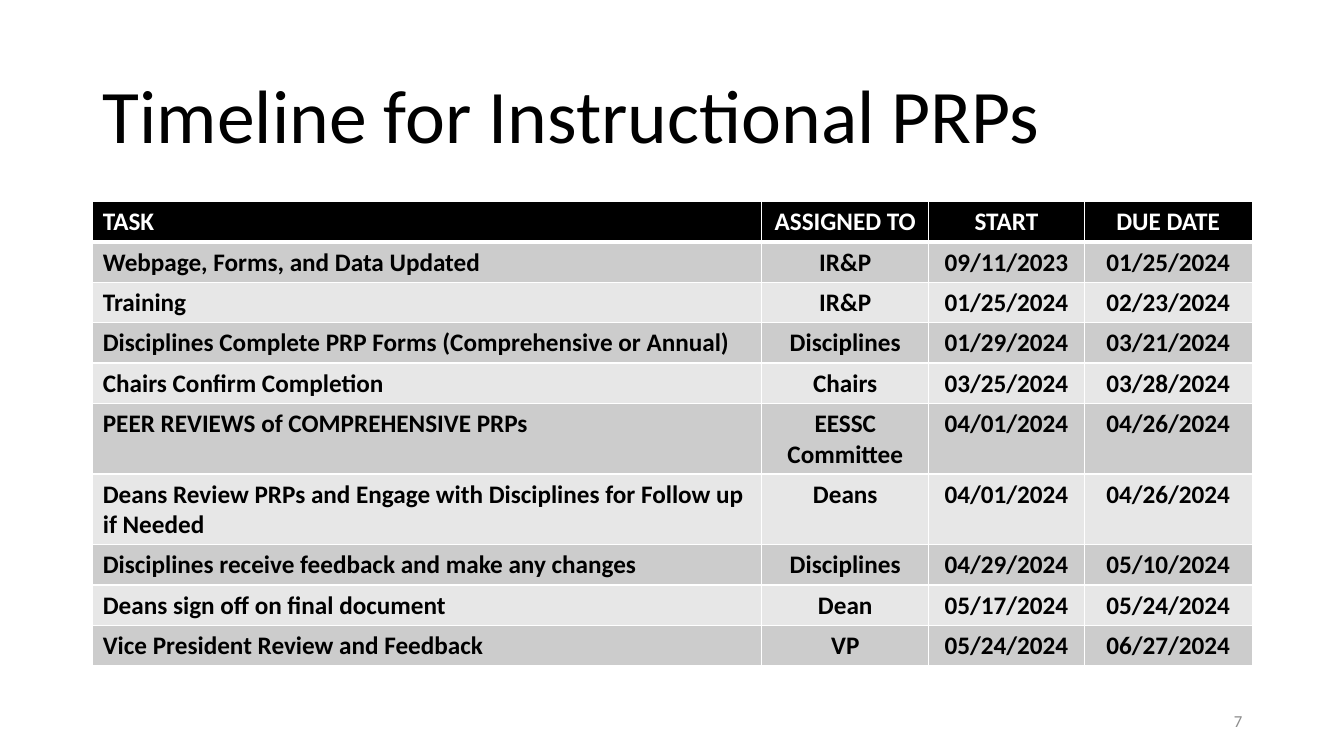
from lxml.etree import SubElement
from pptx import Presentation
from pptx.dml.color import RGBColor
from pptx.enum.text import MSO_ANCHOR, MSO_AUTO_SIZE, PP_ALIGN
from pptx.oxml.ns import qn
from pptx.util import Inches, Pt

COLORS = {
    "text": "000000", "header": "000000", "header_text": "FFFFFF",
    "band_dark": "CCCCCC", "band_light": "E7E7E7",
    "border": "FFFFFF", "number": "8C8C8C",
}
COLUMN_SHARES = [57.7, 14.4, 13.4, 14.5]
HEADER = ("TASK", "ASSIGNED TO", "START", "DUE DATE")
TASKS = [
    ("Webpage, Forms, and Data Updated", "IR&P", "09/11/2023", "01/25/2024"),
    ("Training", "IR&P", "01/25/2024", "02/23/2024"),
    ("Disciplines Complete PRP Forms (Comprehensive or Annual)", "Disciplines",
     "01/29/2024", "03/21/2024"),
    ("Chairs Confirm Completion", "Chairs", "03/25/2024", "03/28/2024"),
    ("PEER REVIEWS of COMPREHENSIVE PRPs", "EESSC Committee", "04/01/2024", "04/26/2024"),
    ("Deans Review PRPs and Engage with Disciplines for Follow up if Needed", "Deans",
     "04/01/2024", "04/26/2024"),
    ("Disciplines receive feedback and make any changes", "Disciplines",
     "04/29/2024", "05/10/2024"),
    ("Deans sign off on final document", "Dean", "05/17/2024", "05/24/2024"),
    ("Vice President Review and Feedback", "VP", "05/24/2024", "06/27/2024"),
]
TWO_LINE_ROWS = {5, 6}


class SlideBuilder:
    """Places elements on a grid of 100 columns between the margins and 75 rows."""
    font = "Calibri"
    margin = Inches(0.92)
    column = Inches(11.5) / 100
    row = Inches(7.5) / 75

    def __init__(self, prs):
        self.s = prs.slides.add_slide(prs.slide_layouts[5])

    def box(self, col, row, cols, rows):
        return (self.margin + round(col * self.column), round(row * self.row),
                round(cols * self.column), round(rows * self.row))

    def set_text(self, tf, text, size, color, align, bold=False):
        tf.word_wrap = True
        p = tf.paragraphs[0]
        p.text, p.alignment = text, align
        p.font.name, p.font.size, p.font.bold = self.font, Pt(size), bold
        p.font.color.rgb = RGBColor.from_string(COLORS[color])
        return p

    def title(self, text, box):
        sp = self.s.shapes.title
        sp.left, sp.top, sp.width, sp.height = box
        tf = sp.text_frame
        tf.auto_size, tf.vertical_anchor = MSO_AUTO_SIZE.NONE, MSO_ANCHOR.BOTTOM
        self.set_text(tf, text, 54, "text", PP_ALIGN.LEFT).line_spacing = 0.9

    def number(self, text, box):
        tf = self.s.shapes.add_textbox(*box).text_frame
        tf.vertical_anchor = MSO_ANCHOR.MIDDLE
        self.set_text(tf, text, 12, "number", PP_ALIGN.RIGHT)

    def borders(self, cell, **widths):
        tc_pr = cell._tc.get_or_add_tcPr()
        for i, side in enumerate("LRTB"):
            ln = SubElement(tc_pr, qn(f"a:ln{side}"), w=str(Pt(widths.get(side, 1))))
            fill = SubElement(ln, qn("a:solidFill"))
            SubElement(fill, qn("a:srgbClr"), val=COLORS["border"])
            tc_pr.insert(i, ln)

    def table(self, rows, shares, tall_rows, box):
        table = self.s.shapes.add_table(len(rows), len(shares), *box).table
        for column, share in zip(table.columns, shares):
            column.width = round(share * self.column)
        for i, values in enumerate(rows):
            table.rows[i].height = round((7 if i in tall_rows else 4) * self.row)
            band = "header" if i == 0 else "band_dark" if i % 2 else "band_light"
            for j, value in enumerate(values):
                cell = table.cell(i, j)
                cell.fill.solid()
                cell.fill.fore_color.rgb = RGBColor.from_string(COLORS[band])
                self.set_text(cell.text_frame, value, 18, "text" if i else "header_text",
                              PP_ALIGN.CENTER if j else PP_ALIGN.LEFT, bold=True)
                # The rule below the header is heavier
                self.borders(cell, T=3 if i == 1 else 1, B=1 if i else 3)


def main():
    prs = Presentation()
    prs.slide_width, prs.slide_height = Inches(13.33), Inches(7.5)
    slide = SlideBuilder(prs)

    # Title
    slide.title("Timeline for Instructional PRPs", slide.box(0, 6.2, 100, 10.2))

    # Slide number
    slide.number("7", slide.box(73.9, 69.5, 26.1, 4))

    # Schedule
    slide.table([HEADER] + TASKS, COLUMN_SHARES, TWO_LINE_ROWS, slide.box(0, 20, 100, 46))

    prs.save("out.pptx")


if __name__ == "__main__":
    main()
